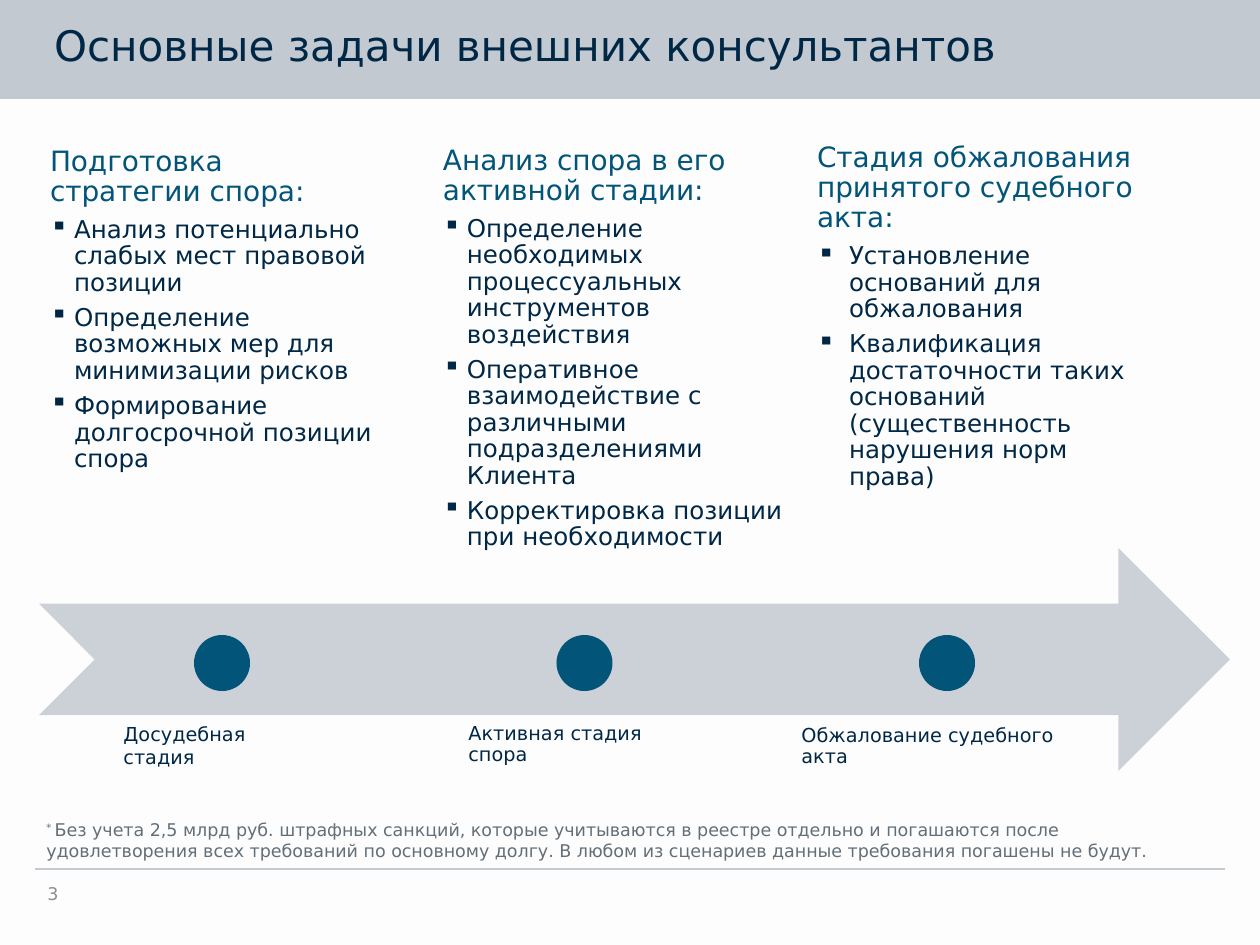
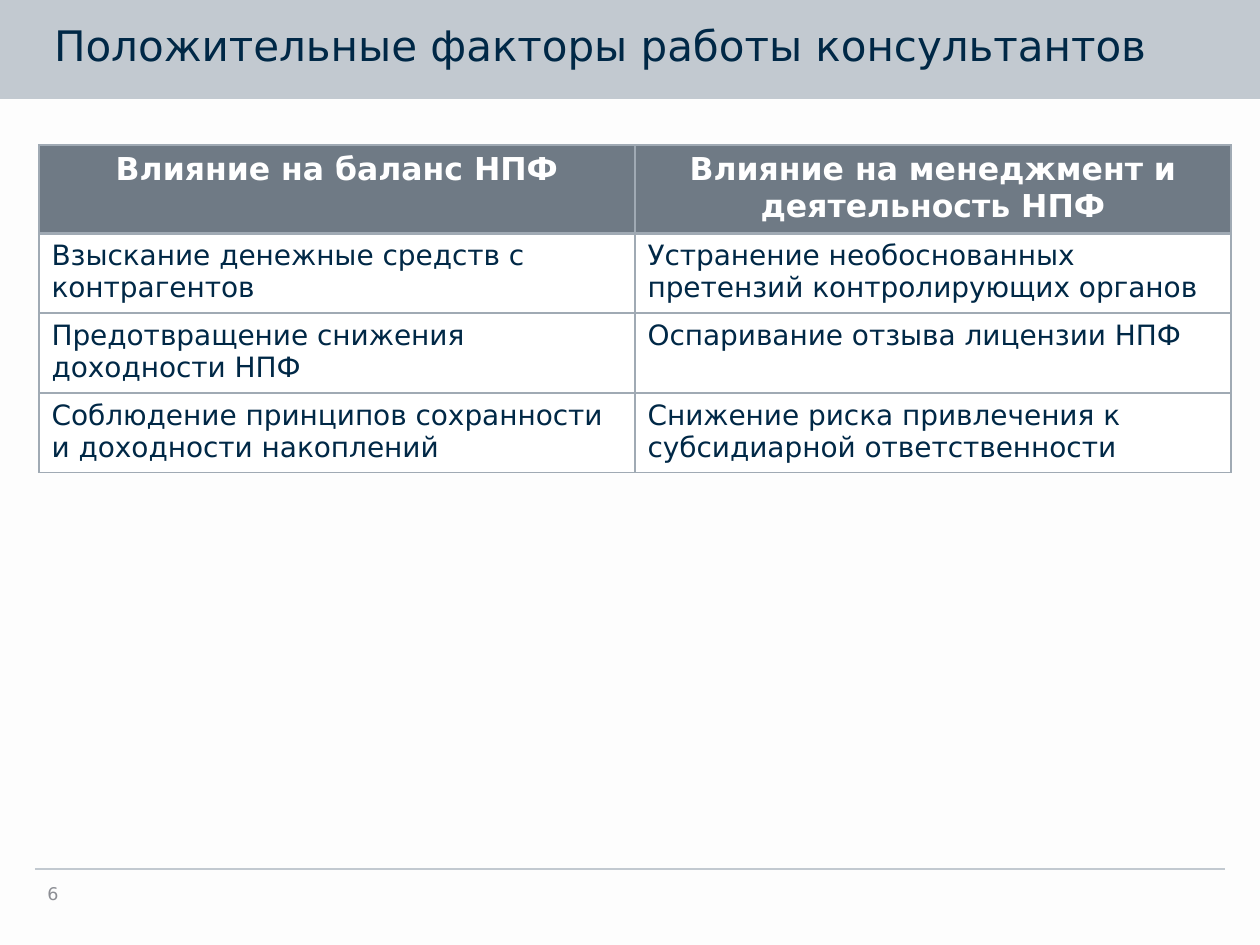
from lxml.etree import SubElement
from pptx import Presentation
from pptx.dml.color import RGBColor
from pptx.enum.shapes import MSO_CONNECTOR, MSO_SHAPE
from pptx.enum.text import MSO_ANCHOR, MSO_AUTO_SIZE, PP_ALIGN
from pptx.oxml.ns import qn
from pptx.util import Emu, Pt

COLORS = {
    "background": "FDFDFD", "band": "C2C9D0", "navy": "002846",
    "teal": "025579", "arrow": "CCD1D7", "note": "636F78",
    "number": "8C8E94", "header": "6F7A85", "border": "A0AAB4",
    "white": "FFFFFF",
}
FONT = "DejaVu Sans"
EMU_PER_PX = 914400 / 126
TITLE_ONLY = 5

TASKS_TITLE = "Основные задачи внешних консультантов"
# (left, top, width, height), bullet indent, heading, bullets
TASK_COLUMNS = [
    ((37, 134, 348, 373), 24, "Подготовка стратегии спора:", [
        "Анализ потенциально слабых мест правовой позиции",
        "Определение возможных мер для минимизации рисков",
        "Формирование долгосрочной позиции спора",
    ]),
    ((430, 133, 368, 437), 24, "Анализ спора в его активной стадии:", [
        "Определение необходимых процессуальных инструментов воздействия",
        "Оперативное взаимодействие с различными подразделениями Клиента",
        "Корректировка позиции при необходимости",
    ]),
    ((804, 130, 345, 384), 32, "Стадия обжалования принятого судебного акта:", [
        "Установление оснований для обжалования",
        "Квалификация достаточности таких оснований "
        "(существенность нарушения норм права)",
    ]),
]
# place, line spacing, label
STAGES = [
    ((111, 716, 219, 58), 1.0, "Досудебная стадия"),
    ((456, 718, 260, 58), 0.9, "Активная стадия спора"),
    ((789, 720, 324, 58), 0.9, "Обжалование судебного акта"),
]
ARROW = (39, 548, 1191, 223)
DOT_LEFT, DOT_TOP, DOT_SIZE, DOT_STEP = 194, 635, 56, 362.5
FOOTNOTE = (
    "Без учета 2,5 млрд руб. штрафных санкций, которые учитываются в реестре "
    "отдельно и погашаются после удовлетворения всех требований по основному "
    "долгу. В любом из сценариев данные требования погашены не будут."
)

FACTORS_TITLE = "Положительные факторы работы консультантов"
FACTORS = [
    ("Влияние на баланс НПФ", "Влияние на менеджмент и деятельность НПФ"),
    ("Взыскание денежные средств с контрагентов",
     "Устранение необоснованных претензий контролирующих органов"),
    ("Предотвращение снижения доходности НПФ",
     "Оспаривание отзыва лицензии НПФ"),
    ("Соблюдение принципов сохранности и доходности накоплений",
     "Снижение риска привлечения к субсидиарной ответственности"),
]
TABLE_LEFT, TABLE_TOP, COLUMN_WIDTH = 39, 145, 596
ROW_HEIGHTS = [86, 77, 77, 77]


def px(length):
    return Emu(round(length * EMU_PER_PX))


def place(*lengths):
    return [px(length) for length in lengths]


def color(name):
    return RGBColor.from_string(COLORS[name])


def add_span(para, text, size, color_name, bold=False):
    span = para.add_run()
    span.text = text
    span.font.name = FONT
    span.font.size = Pt(size)
    span.font.bold = bold
    span.font.color.rgb = color(color_name)
    return span


def add_box(page, at):
    box = page.shapes.add_textbox(*place(*at))
    box.text_frame.word_wrap = True
    return box.text_frame


def add_plain_shape(page, kind, at, color_name):
    shape = page.shapes.add_shape(kind, *place(*at))
    shape.shadow.inherit = False
    shape.fill.solid()
    shape.fill.fore_color.rgb = color(color_name)
    shape.line.fill.background()
    return shape


def set_indent(para, margin, first=0):
    properties = para._p.get_or_add_pPr()
    properties.set("marL", str(px(margin)))
    properties.set("indent", str(px(first)))
    return properties


def add_page(deck, title_text, number):
    """Add a slide with the title band, the footer line and the number."""
    page = deck.slides.add_slide(deck.slide_layouts[TITLE_ONLY])
    title = page.shapes.title
    band = add_plain_shape(page, MSO_SHAPE.RECTANGLE, (0, 0, 1260, 99), "band")
    title.element.addprevious(band.element)

    title.left, title.top, title.width, title.height = place(0, -1, 1260, 99)
    frame = title.text_frame
    frame.auto_size = MSO_AUTO_SIZE.NONE
    frame.word_wrap = True
    frame.vertical_anchor = MSO_ANCHOR.MIDDLE
    frame.margin_left = frame.margin_right = px(5)
    frame.margin_top = frame.margin_bottom = px(5)
    para = frame.paragraphs[0]
    para.alignment = PP_ALIGN.LEFT
    para.line_spacing = 0.85
    set_indent(para, 49)
    add_span(para, title_text, 24, "navy")

    rule = page.shapes.add_connector(
        MSO_CONNECTOR.STRAIGHT, *place(35, 869, 1225, 869))
    rule.line.color.rgb = color("band")
    rule.line.width = Pt(1.5)
    SubElement(rule.element.spPr, qn("a:effectLst"))

    frame = add_box(page, (35, 877, 159, 33))
    frame.vertical_anchor = MSO_ANCHOR.MIDDLE
    add_span(frame.paragraphs[0], str(number), 10, "number")
    return page


def add_task_column(page, at, indent, heading, bullets):
    frame = add_box(page, at)
    frame.margin_left = frame.margin_right = px(13)
    frame.margin_top = frame.margin_bottom = px(13)
    for index, text in enumerate([heading, *bullets]):
        para = frame.add_paragraph() if index else frame.paragraphs[0]
        size = 14 if index else 16
        para.line_spacing = 0.9
        para.space_after = Pt(round(size * 0.35, 1))
        if index:
            properties = set_indent(para, indent, -indent)
            SubElement(properties, qn("a:buChar")).set("char", "▪")
        add_span(para, text, size, "navy" if index else "teal")


def add_tasks_page(deck):
    page = add_page(deck, TASKS_TITLE, 3)
    para = add_box(page, (34, 813, 1191, 55)).paragraphs[0]
    star = add_span(para, "* ", 10, "note")
    star._r.get_or_add_rPr().set("baseline", "30000")
    add_span(para, FOOTNOTE, 10, "note")

    add_plain_shape(page, MSO_SHAPE.NOTCHED_RIGHT_ARROW, ARROW, "arrow")
    for column in TASK_COLUMNS:
        add_task_column(page, *column)
    for index, (at, spacing, label) in enumerate(STAGES):
        dot = (DOT_LEFT + index * DOT_STEP, DOT_TOP, DOT_SIZE, DOT_SIZE)
        add_plain_shape(page, MSO_SHAPE.OVAL, dot, "teal")
        para = add_box(page, at).paragraphs[0]
        para.line_spacing = spacing
        add_span(para, label, 11, "navy")


def set_borders(cell, bottom_width):
    properties = cell._tc.get_or_add_tcPr()
    widths = {"lnL": 1, "lnR": 1, "lnT": 1, "lnB": bottom_width}
    for index, (side, width) in enumerate(widths.items()):
        line = SubElement(properties, qn(f"a:{side}"), w=str(Pt(width)))
        fill = SubElement(line, qn("a:solidFill"))
        SubElement(fill, qn("a:srgbClr"), val=COLORS["border"])
        properties.insert(index, line)


def add_factors_page(deck):
    page = add_page(deck, FACTORS_TITLE, 6)
    columns = len(FACTORS[0])
    table = page.shapes.add_table(
        len(FACTORS), columns,
        *place(TABLE_LEFT, TABLE_TOP, COLUMN_WIDTH * columns, sum(ROW_HEIGHTS)),
    ).table
    table.horz_banding = False
    for column in table.columns:
        column.width = px(COLUMN_WIDTH)
    for row_index, texts in enumerate(FACTORS):
        header = row_index == 0
        table.rows[row_index].height = px(ROW_HEIGHTS[row_index])
        for column_index, text in enumerate(texts):
            cell = table.cell(row_index, column_index)
            cell.fill.solid()
            cell.fill.fore_color.rgb = color("header" if header else "white")
            set_borders(cell, 2 if header else 1)
            para = cell.text_frame.paragraphs[0]
            para.alignment = PP_ALIGN.CENTER if header else PP_ALIGN.LEFT
            add_span(para, text, 18 if header else 16,
                     "white" if header else "navy", header)


def main():
    deck = Presentation()
    deck.slide_width, deck.slide_height = place(1260, 945)
    background = deck.slide_master.background.fill
    background.solid()
    background.fore_color.rgb = color("background")
    add_tasks_page(deck)
    add_factors_page(deck)
    deck.save("out.pptx")


if __name__ == "__main__":
    main()
